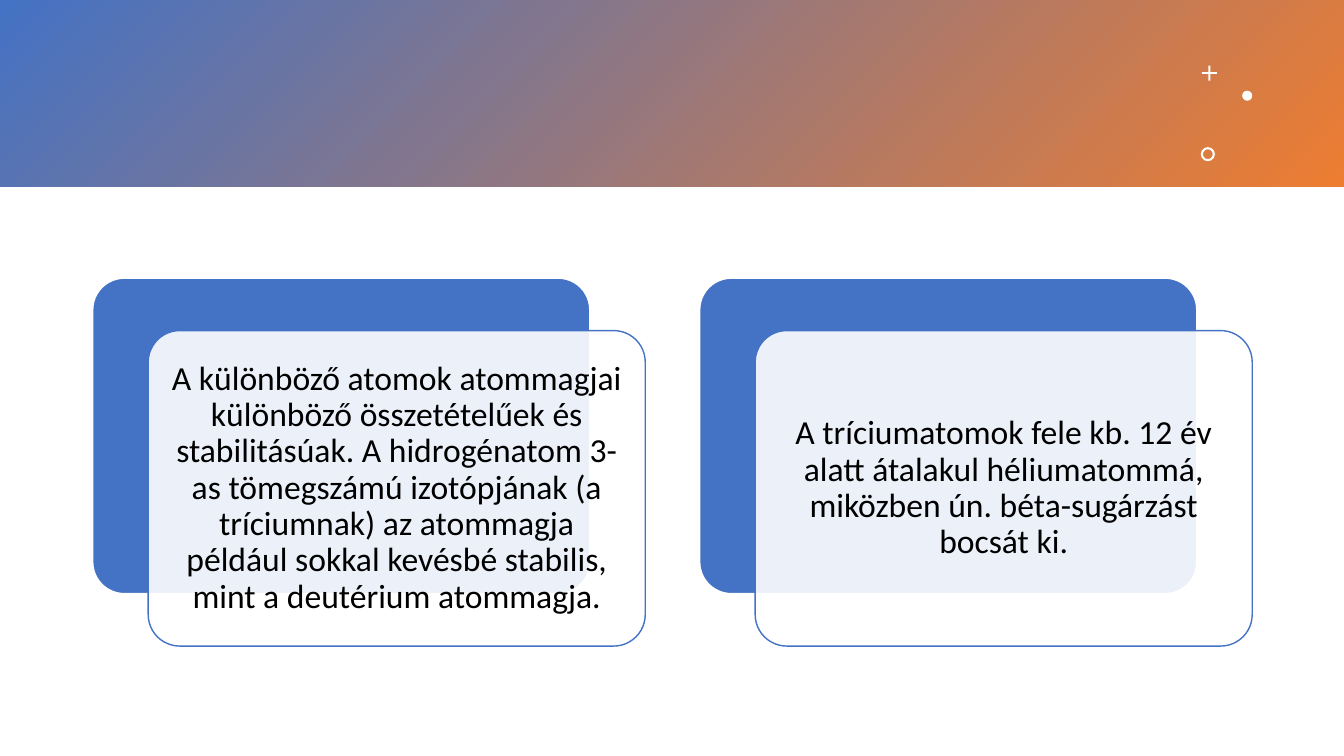
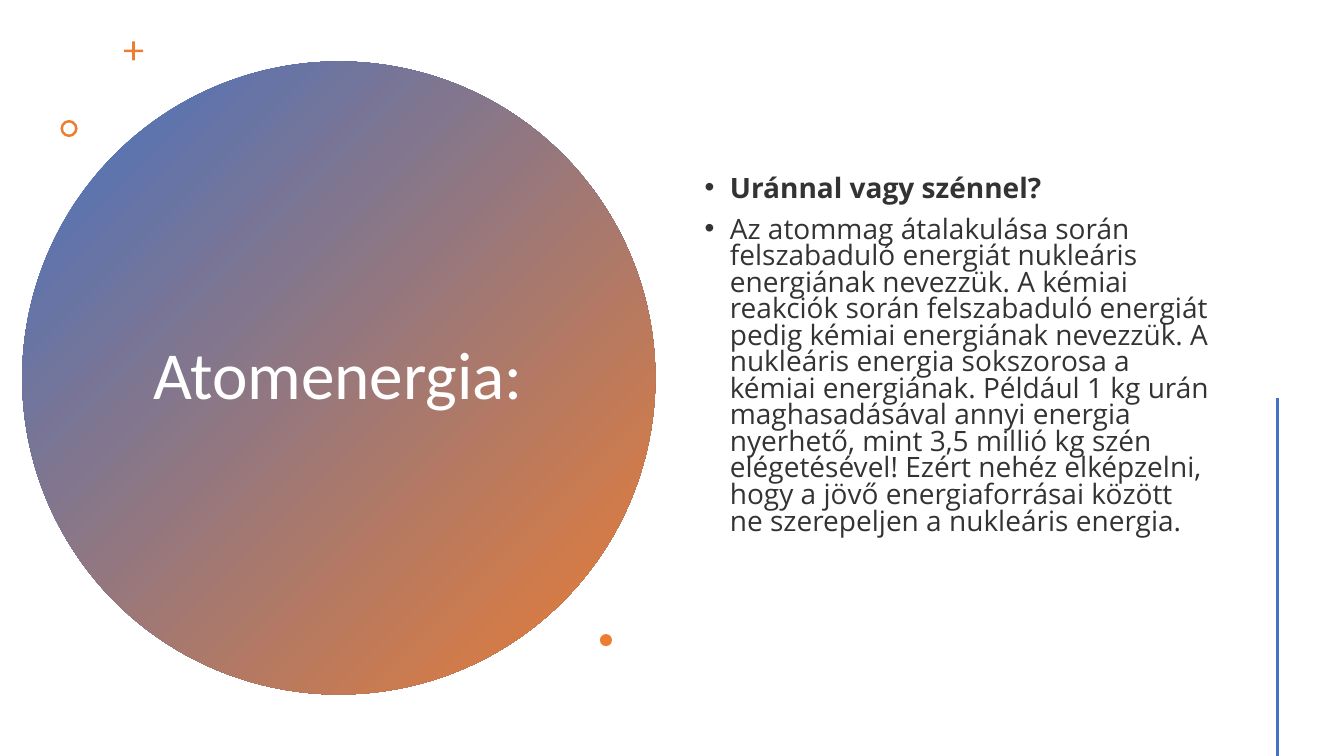
"""Build two slides on unstable nuclei and atomic energy."""
from dataclasses import dataclass

from lxml.etree import SubElement
from pptx import Presentation
from pptx.dml.color import RGBColor
from pptx.enum.shapes import MSO_CONNECTOR, MSO_SHAPE
from pptx.enum.text import MSO_ANCHOR, PP_ALIGN
from pptx.oxml.ns import qn
from pptx.shapes.autoshape import Shape
from pptx.slide import Slide
from pptx.text.text import TextFrame
from pptx.util import Inches, Pt


@dataclass(frozen=True)
class Theme:
    blue: RGBColor = RGBColor(0x44, 0x72, 0xC4)
    orange: RGBColor = RGBColor(0xED, 0x7D, 0x31)
    white: RGBColor = RGBColor(0xFF, 0xFF, 0xFF)
    black: RGBColor = RGBColor(0, 0, 0)
    gray: RGBColor = RGBColor(0x33, 0x33, 0x33)
    sans: str = "Calibri"
    open: str = "Open Sans"
    title: int = 48
    card: int = 24
    body: int = 20


@dataclass(frozen=True)
class Box:
    left: float
    top: float
    width: float
    height: float


@dataclass(frozen=True)
class Mark:
    kind: MSO_SHAPE
    left: float
    top: float
    size: float
    adjust: float | None = None


@dataclass(frozen=True)
class Style:
    font: str
    size: int
    color: RGBColor
    align: PP_ALIGN = PP_ALIGN.CENTER
    lines: float = 0.9
    before: int = 0
    bullet: bool = False


@dataclass(frozen=True)
class Line:
    text: str
    bold: bool = False


THEME = Theme()
TITLE = Style(THEME.sans, THEME.title, THEME.white)
CARD = Style(THEME.sans, THEME.card, THEME.black)
BODY = Style(THEME.open, THEME.body, THEME.gray, PP_ALIGN.LEFT, 0.79, 10, True)

CARD_LEFT, CARD_TOP, CARD_STEP = 0.92, 2.76, 6.02
CARD_WIDTH, CARD_HEIGHT = 4.93, 3.13
SHIFT_X, SHIFT_Y = 0.55, 0.52

BAND_MARKS = (
    Mark(MSO_SHAPE.CROSS, 11.92, 0.65, 0.15, 0.44),
    Mark(MSO_SHAPE.OVAL, 12.32, 0.9, 0.1),
    Mark(MSO_SHAPE.DONUT, 11.91, 1.46, 0.14, 0.15),
)
DISC_MARKS = (
    Mark(MSO_SHAPE.CROSS, 1.23, 0.41, 0.19, 0.43),
    Mark(MSO_SHAPE.DONUT, 0.6, 1.19, 0.17, 0.15),
    Mark(MSO_SHAPE.OVAL, 5.95, 6.29, 0.12),
)
CARDS = (
    "A különböző atomok atommagjai különböző összetételűek és stabilitásúak. "
    "A hidrogénatom 3-as tömegszámú izotópjának (a tríciumnak) az atommagja "
    "például sokkal kevésbé stabilis, mint a deutérium atommagja.",
    "A tríciumatomok fele kb. 12 év alatt átalakul héliumatommá, miközben ún. "
    "béta-sugárzást bocsát ki.",
)
POINTS = (
    Line("Uránnal vagy szénnel?", True),
    Line(
        "Az atommag átalakulása során felszabaduló energiát nukleáris energiának "
        "nevezzük. A kémiai reakciók során felszabaduló energiát pedig kémiai "
        "energiának nevezzük. A nukleáris energia sokszorosa a kémiai energiának. "
        "Például 1 kg urán maghasadásával annyi energia nyerhető, mint 3,5 millió "
        "kg szén elégetésével! Ezért nehéz elképzelni, hogy a jövő energiaforrásai "
        "között ne szerepeljen a nukleáris energia."
    ),
)


def place(box: Box) -> tuple[int, int, int, int]:
    """Give the box as lengths."""
    return (Inches(box.left), Inches(box.top), Inches(box.width), Inches(box.height))


def add_form(slide: Slide, kind: MSO_SHAPE, box: Box, fill: RGBColor | None = None,
             edge: RGBColor | None = None, adjust: float | None = None) -> Shape:
    """Draw a preset shape, with the blend when no fill is given."""
    shape = slide.shapes.add_shape(kind, *place(box))
    shape.shadow.inherit = False
    if adjust is not None:
        shape.adjustments[0] = adjust
    if fill is None:
        shape.fill.gradient()
        shape.fill.gradient_angle = 315
        for stop, color in zip(shape.fill.gradient_stops, (THEME.blue, THEME.orange)):
            stop.color.rgb = color
    else:
        shape.fill.solid()
        shape.fill.fore_color.rgb = fill
    if edge is None:
        shape.line.fill.background()
    else:
        shape.line.color.rgb = edge
        shape.line.width = Pt(1)
    return shape


def write(frame: TextFrame, lines: tuple[Line, ...], style: Style) -> None:
    """Fill a frame with styled lines."""
    frame.word_wrap = True
    frame.vertical_anchor = MSO_ANCHOR.MIDDLE
    for index, line in enumerate(lines):
        para = frame.add_paragraph() if index else frame.paragraphs[0]
        para.text = line.text
        para.alignment = style.align
        para.line_spacing = style.lines
        para.space_before = Pt(style.before)
        if style.bullet:
            props = para._p.get_or_add_pPr()
            props.set("marL", str(Inches(0.25)))
            props.set("indent", str(Inches(-0.25)))
            SubElement(props, qn("a:buFont"), typeface="Arial")
            SubElement(props, qn("a:buChar"), char="•")
        para.font.name = style.font
        para.font.size = Pt(style.size)
        para.font.bold = line.bold
        para.font.color.rgb = style.color


def add_text(slide: Slide, box: Box, lines: tuple[Line, ...], style: Style) -> None:
    """Add a text box."""
    write(slide.shapes.add_textbox(*place(box)).text_frame, lines, style)


def add_marks(slide: Slide, marks: tuple[Mark, ...], color: RGBColor) -> None:
    """Draw the small plus, dot and ring."""
    for mark in marks:
        box = Box(mark.left, mark.top, mark.size, mark.size)
        add_form(slide, mark.kind, box, color, adjust=mark.adjust)


def add_card(slide: Slide, left: float, text: str) -> None:
    """Draw a blue card with a sheer text card over it."""
    back = Box(left, CARD_TOP, CARD_WIDTH, CARD_HEIGHT)
    front = Box(left + SHIFT_X, CARD_TOP + SHIFT_Y, CARD_WIDTH, CARD_HEIGHT)
    kind = MSO_SHAPE.ROUNDED_RECTANGLE
    add_form(slide, kind, back, THEME.blue, THEME.white, 0.1)
    sheet = add_form(slide, kind, front, THEME.white, THEME.blue, 0.1)
    color = sheet._element.spPr.find(qn("a:solidFill")).find(qn("a:srgbClr"))
    SubElement(color, qn("a:alpha"), val="90000")
    write(sheet.text_frame, (Line(text),), CARD)


def add_rule(slide: Slide, left: float, top: float, end: float) -> None:
    """Draw an upright line."""
    rule = slide.shapes.add_connector(
        MSO_CONNECTOR.STRAIGHT, Inches(left), Inches(top), Inches(left), Inches(end))
    rule.line.color.rgb = THEME.blue
    rule.line.width = Pt(2)
    SubElement(rule._element.spPr, qn("a:effectLst"))


def draw_cards(slide: Slide) -> None:
    """Build the slide with two cards."""
    add_form(slide, MSO_SHAPE.RECTANGLE, Box(0, 0, 13.33, 1.85))
    add_marks(slide, BAND_MARKS, THEME.white)
    for index, text in enumerate(CARDS):
        add_card(slide, CARD_LEFT + index * CARD_STEP, text)


def draw_disc(slide: Slide) -> None:
    """Build the slide with the title disc."""
    add_form(slide, MSO_SHAPE.OVAL, Box(0.22, 0.61, 6.28, 6.28))
    add_text(slide, Box(1.36, 1.41, 3.99, 4.67), (Line("Atomenergia:"),), TITLE)
    add_marks(slide, DISC_MARKS, THEME.orange)
    add_text(slide, Box(6.89, 0.57, 5.22, 5.94), POINTS, BODY)
    add_rule(slide, 12.67, 3.95, 7.5)


def main() -> None:
    """Make and save the deck."""
    deck = Presentation()
    deck.slide_width, deck.slide_height = Inches(13.33), Inches(7.5)
    for draw in (draw_cards, draw_disc):
        draw(deck.slides.add_slide(deck.slide_layouts[6]))
    deck.save("out.pptx")


if __name__ == "__main__":
    main()
